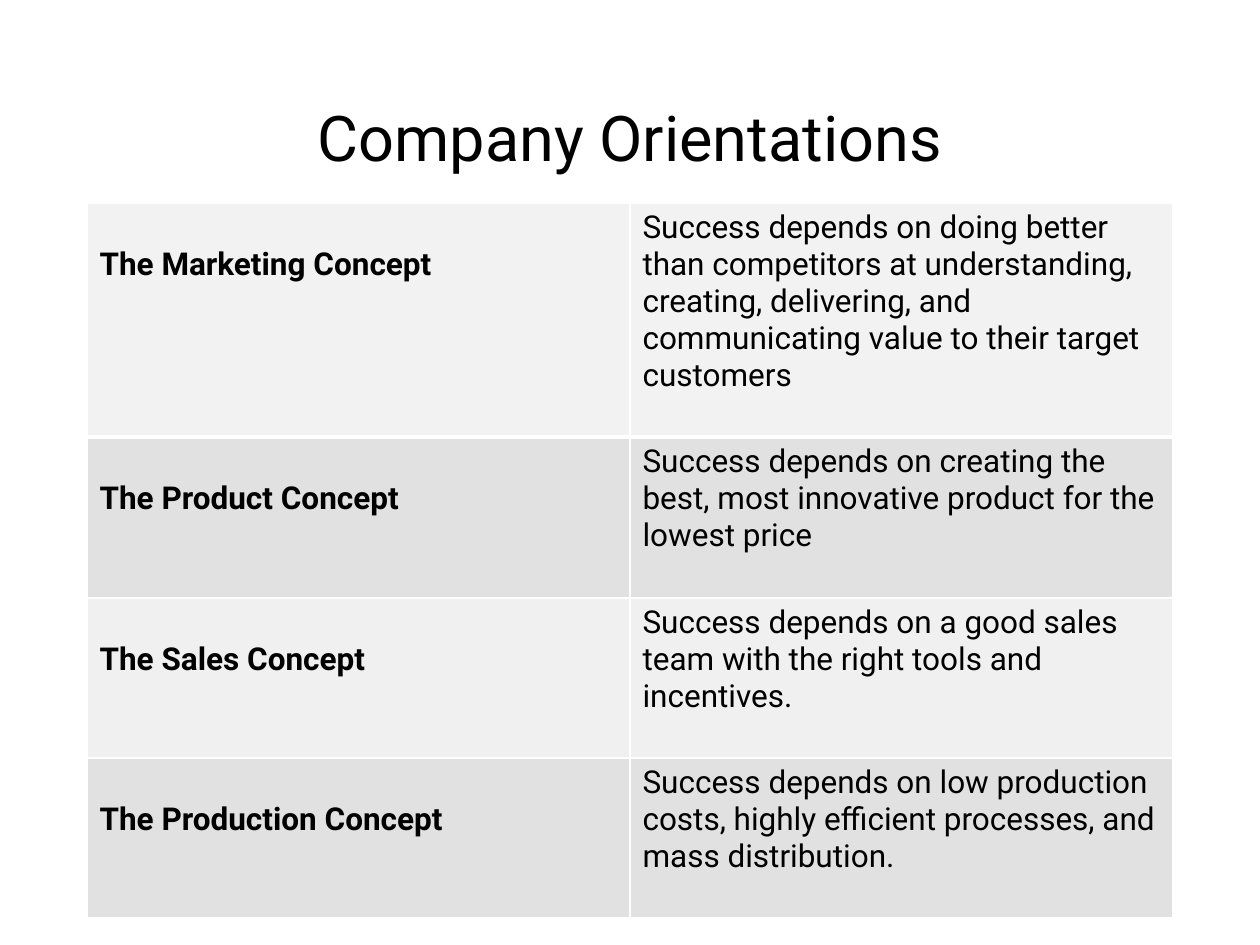
import pptx
import pptx.dml.color
import pptx.enum.text
import pptx.oxml
import pptx.oxml.ns
import pptx.util

SCALE = 914400 // 126
FONT = "Roboto"
BLACK = "000000"
WHITE = "FFFFFF"
LEFT = 87
COLUMN_WIDTH = 543
ROW_HEIGHTS = [234, 161, 160, 160]
ROW_FILLS = ["F2F2F2", "E1E1E1", "F0F0F0", "E1E1E1"]
CONCEPTS = [
    ("The Marketing Concept",
     "Success depends on doing better than competitors at understanding, creating, "
     "delivering, and communicating value to their target customers"),
    ("The Product Concept",
     "Success depends on creating the best, most innovative product for the lowest price"),
    ("The Sales Concept",
     "Success depends on a good sales team with the right tools and incentives."),
    ("The Production Concept",
     "Success depends on low production costs, highly efficient processes, and mass distribution."),
]


def px(length):
    return pptx.util.Emu(length * SCALE)


def colour(value):
    return pptx.dml.color.RGBColor.from_string(value)


def set_font(paragraph, size, bold=False):
    paragraph.font.name = FONT
    paragraph.font.size = pptx.util.Pt(size)
    paragraph.font.bold = bold
    paragraph.font.color.rgb = colour(BLACK)


def add_title(page, text):
    title = page.shapes.title
    title.left, title.top, title.width, title.height = px(LEFT), px(50), px(2 * COLUMN_WIDTH), px(183)
    frame = title.text_frame
    frame.text = text
    frame.word_wrap = True
    frame.auto_size = pptx.enum.text.MSO_AUTO_SIZE.NONE
    frame.vertical_anchor = pptx.enum.text.MSO_ANCHOR.MIDDLE
    paragraph = frame.paragraphs[0]
    paragraph.alignment = pptx.enum.text.PP_ALIGN.CENTER
    paragraph.line_spacing = 0.9
    set_font(paragraph, 36)


def set_borders(cell, top, bottom):
    properties = cell._tc.get_or_add_tcPr()
    widths = {"L": 1, "R": 1, "T": top, "B": bottom}
    for position, (side, width) in enumerate(widths.items()):
        border = pptx.oxml.parse_xml(
            f'<a:ln{side} {pptx.oxml.ns.nsdecls("a")} w="{pptx.util.Pt(width)}">'
            f'<a:solidFill><a:srgbClr val="{WHITE}"/></a:solidFill></a:ln{side}>')
        properties.insert(position, border)


def fill_cell(cell, text, fill, bold):
    cell.text = text
    cell.fill.solid()
    cell.fill.fore_color.rgb = colour(fill)
    cell.vertical_anchor = pptx.enum.text.MSO_ANCHOR.TOP
    set_font(cell.text_frame.paragraphs[0], 18, bold)


def add_concept_table(page):
    table = page.shapes.add_table(
        len(CONCEPTS), 2, px(LEFT), px(203), px(2 * COLUMN_WIDTH), px(sum(ROW_HEIGHTS))).table
    table.first_row = False
    table.horz_banding = False
    for column in table.columns:
        column.width = px(COLUMN_WIDTH)
    for index, (texts, height, fill) in enumerate(zip(CONCEPTS, ROW_HEIGHTS, ROW_FILLS)):
        row = table.rows[index]
        row.height = px(height)
        for column, text in enumerate(texts):
            cell = row.cells[column]
            fill_cell(cell, text, fill, bold=column == 0)
            set_borders(cell, top=3 if index == 1 else 1, bottom=3 if index == 0 else 1)
        row.cells[0].margin_top = px(43)


def main():
    deck = pptx.Presentation()
    deck.slide_width, deck.slide_height = px(1260), px(945)
    page = deck.slides.add_slide(deck.slide_layouts[5])
    page.background.fill.solid()
    page.background.fill.fore_color.rgb = colour(WHITE)
    add_title(page, "Company Orientations")
    add_concept_table(page)
    deck.save("out.pptx")


if __name__ == "__main__":
    main()
